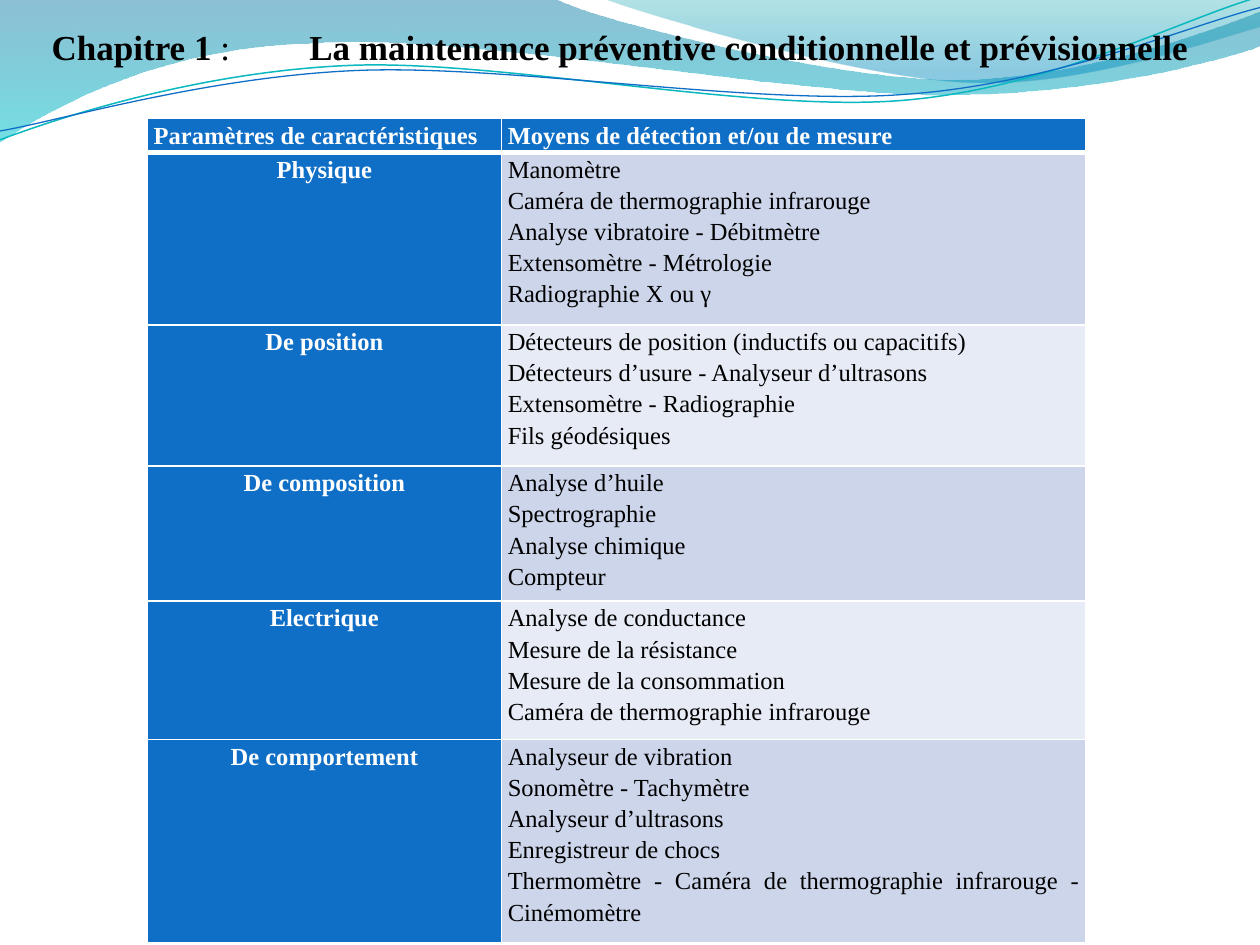
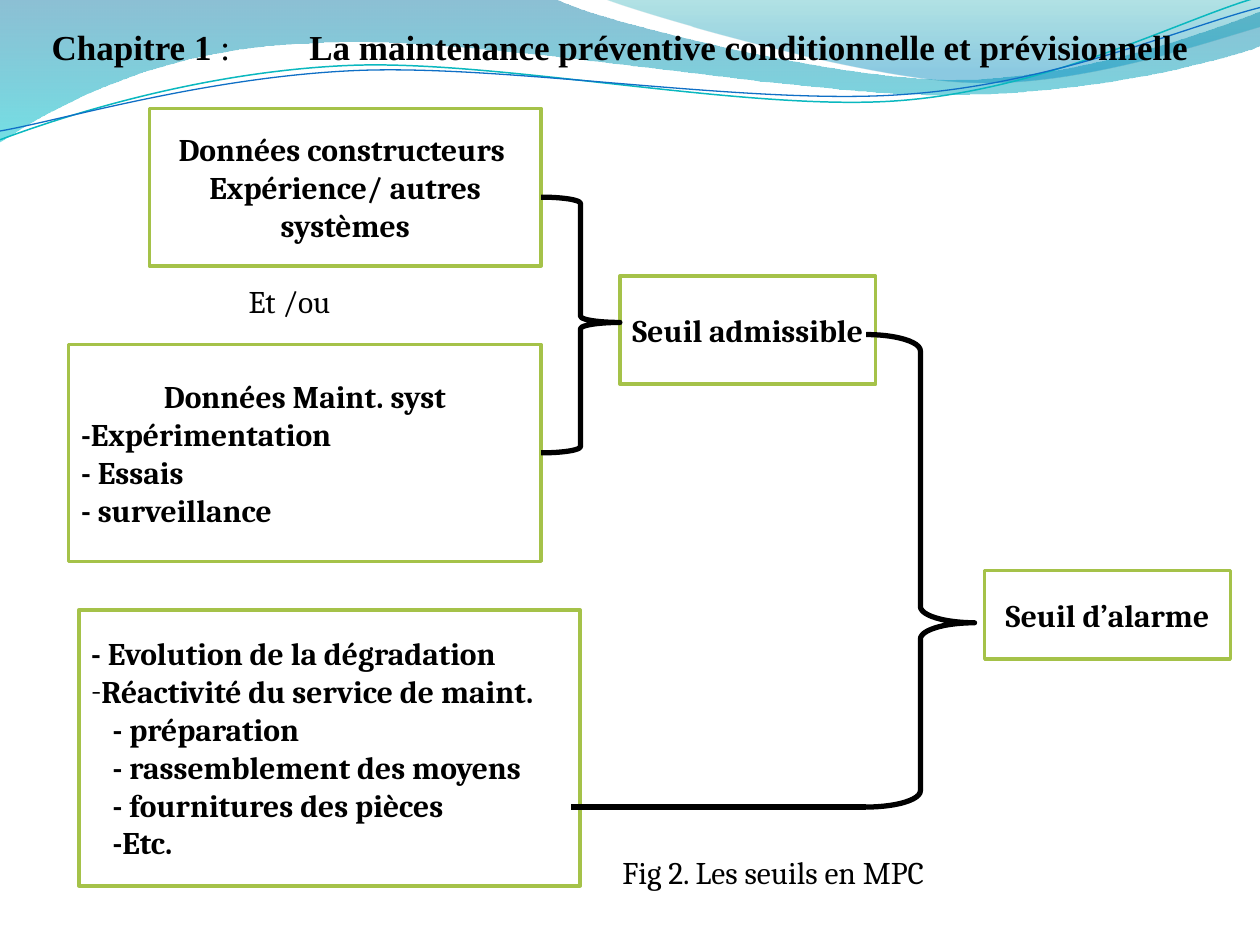
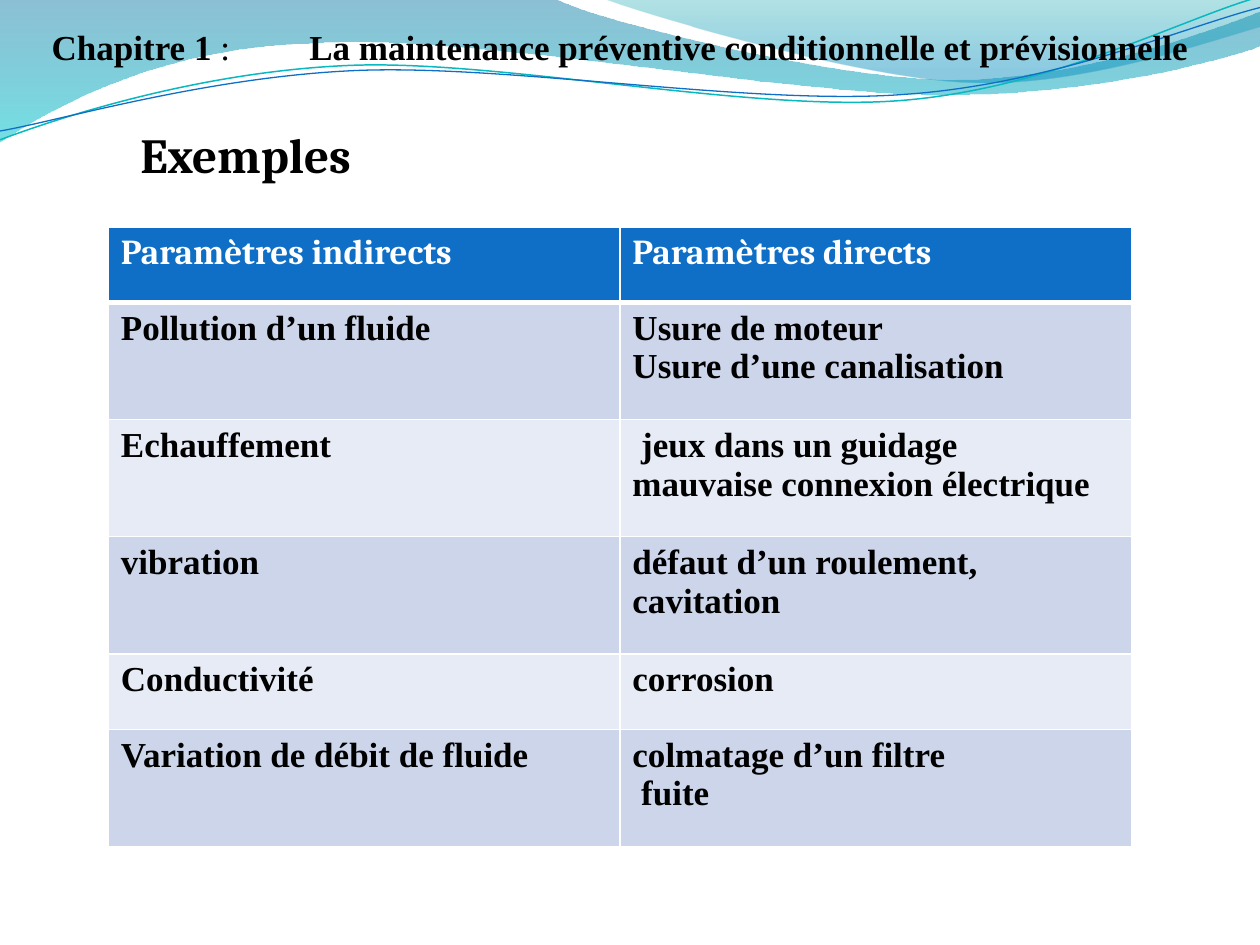
"""Build three slides on conditional and predictive preventive maintenance."""

from dataclasses import dataclass, field
from typing import Any, Optional

import lxml.etree
import pptx
import pptx.dml.color
import pptx.enum.shapes
import pptx.enum.text
import pptx.oxml.ns
import pptx.util

RGBColor = pptx.dml.color.RGBColor
Align = pptx.enum.text.PP_ALIGN
Anchor = pptx.enum.text.MSO_ANCHOR
AutoSize = pptx.enum.text.MSO_AUTO_SIZE
Preset = pptx.enum.shapes.MSO_SHAPE
Point = tuple[float, float]


@dataclass(frozen=True)
class Theme:
    """Hold the colours, fonts and sizes of the whole deck."""

    black: RGBColor = RGBColor.from_string("000000")
    white: RGBColor = RGBColor.from_string("FFFFFF")
    blue: RGBColor = RGBColor.from_string("0F6FC6")
    teal: RGBColor = RGBColor.from_string("0AB8BF")
    green: RGBColor = RGBColor.from_string("A5C249")
    bands: tuple[RGBColor, ...] = (RGBColor.from_string("CCD5EA"), RGBColor.from_string("E7EBF5"))
    serif: str = "Times New Roman"
    diagram: str = "Cambria"
    small: int = 14
    normal: int = 18
    large: int = 20
    heading: int = 28
    box_line: float = 2
    link_line: float = 3
    header_rule: float = 3


THEME = Theme()
GRID_COLUMNS = 100
GRID_ROWS = 75
SLIDE_WIDTH = pptx.util.Inches(10)
SLIDE_HEIGHT = pptx.util.Inches(7.5)


def across(columns: float) -> int:
    """Turn grid columns into a length."""
    return round(SLIDE_WIDTH * columns / GRID_COLUMNS)


def down(rows: float) -> int:
    """Turn grid rows into a length."""
    return round(SLIDE_HEIGHT * rows / GRID_ROWS)


@dataclass(frozen=True)
class Box:
    """Place an element on the grid."""

    left: float
    top: float
    width: float
    height: float

    def lengths(self) -> tuple[int, int, int, int]:
        """Give left, top, width and height as lengths."""
        return across(self.left), down(self.top), across(self.width), down(self.height)


@dataclass(frozen=True)
class Line:
    """Describe one paragraph."""

    text: str
    alignment: Any = Align.LEFT
    indent: float = 0
    bullet: str = ""


@dataclass(frozen=True)
class Panel:
    """Describe a framed box or a plain caption with its paragraphs."""

    box: Box
    lines: tuple[Line, ...]


@dataclass(frozen=True)
class Brace:
    """Describe a right brace with its curl and tip position."""

    box: Box
    curl: float
    tip: float


@dataclass(frozen=True)
class Stop:
    """Describe one gradient stop, with its opacity in percent."""

    position: float
    color: str
    opacity: int


@dataclass(frozen=True)
class Wave:
    """Describe a curve by its start and its straight or cubic segments."""

    start: Point
    segments: tuple[tuple[Point, ...], ...]
    stops: tuple[Stop, ...] = ()
    color: RGBColor = THEME.blue
    weight: float = 0.75


@dataclass(frozen=True)
class TableSpec:
    """Describe a two-column table."""

    box: Box
    columns: tuple[float, ...]
    rows: tuple[float, ...]
    cells: tuple[tuple[str, str], ...]
    size: int
    header_font: str
    body_bold: bool
    row_headers: bool = False
    alignment: Any = Align.LEFT
    spacing: Optional[float] = None
    margins: dict[str, int] = field(default_factory=dict)


WAVES = (
    Wave((0, 0), (
        ((44, -0.1),),
        ((47.6, 1.7), (66.4, 6.3), (75.8, 6.3)),
        ((85.3, 6.3), (95.8, 2.6), (100, 0.9)),
        ((100.1, 3.6),),
        ((98.3, 4.4), (87, 7.6), (74.6, 7.5)),
        ((62.2, 7.5), (38.2, 2.8), (25.7, 3.4)),
        ((12.9, 3.6), (4.6, 8.3), (-0.1, 11.3)),
        ((0, 0),),
    ), stops=(Stop(0, "0074A1", 45), Stop(1, "00C6CF", 55))),
    Wave((47.9, -0.1), (
        ((50.9, 1.1), (68.2, 6.2), (76.9, 6.5)),
        ((85.6, 6.9), (96.1, 3.2), (100, 2.1)),
        ((100, 0),),
        ((47.9, -0.1),),
    ), stops=(Stop(0, "00A1A9", 30), Stop(0.8, "008BBF", 45))),
    Wave((0, 11.1), (
        ((4.8, 9.3), (15.8, 5.7), (27.7, 5.2)),
        ((39.5, 4.7), (59.3, 8.9), (71.3, 8)),
        ((83.3, 7.1), (93.8, 1.5), (99.8, -0.2)),
    ), color=THEME.teal, weight=0.85),
    Wave((0, 10.4), (
        ((4.7, 9.6), (16.4, 6.1), (28.3, 5.6)),
        ((40.3, 5.1), (59.7, 8.4), (71.7, 7.5)),
        ((83.6, 6.7), (94.1, 2.1), (100, 0.6)),
    )),
)

MEASURES = TableSpec(
    Box(11.7, 9.4, 74.5, 63.7), (28.1, 46.4), (2, 13.7, 11.2, 10.2, 11, 15.6),
    (
        ("Paramètres de caractéristiques", "Moyens de détection et/ou de mesure"),
        ("Physique", "Manomètre\nCaméra de thermographie infrarouge\nAnalyse vibratoire - Débitmètre\n"
                     "Extensomètre - Métrologie\nRadiographie X ou γ"),
        ("De position", "Détecteurs de position (inductifs ou capacitifs)\n"
                        "Détecteurs d’usure - Analyseur d’ultrasons\n"
                        "Extensomètre - Radiographie\nFils géodésiques"),
        ("De composition", "Analyse d’huile\nSpectrographie\nAnalyse chimique\nCompteur"),
        ("Electrique", "Analyse de conductance\nMesure de la résistance\n"
                       "Mesure de la consommation\nCaméra de thermographie infrarouge"),
        ("De comportement", "Analyseur de vibration\nSonomètre - Tachymètre\nAnalyseur d’ultrasons\n"
                            "Enregistreur de chocs\n"
                            "Thermomètre - Caméra de thermographie infrarouge - Cinémomètre"),
    ),
    THEME.small, THEME.serif, body_bold=False, row_headers=True, alignment=Align.JUSTIFY, spacing=1.15,
    margins={"margin_left": across(0.5), "margin_right": across(0.5), "margin_top": 0, "margin_bottom": 0},
)

EXAMPLES = TableSpec(
    Box(8.6, 18, 81.2, 49.2), (40.6, 40.6), (6, 9.3, 9.3, 9.3, 6, 9.3),
    (
        ("Paramètres indirects", "Paramètres directs"),
        ("Pollution d’un fluide", "Usure de moteur\nUsure d’une canalisation"),
        ("Echauffement", " jeux dans un guidage\nmauvaise connexion électrique"),
        ("vibration", "défaut d’un roulement,\ncavitation"),
        ("Conductivité", "corrosion"),
        ("Variation de débit de fluide", "colmatage d’un filtre\n fuite"),
    ),
    THEME.large, THEME.diagram, body_bold=True,
)

SUB_INDENT = 1.7
PANELS = (
    Panel(Box(49.2, 21.9, 20.3, 8.6), (Line("Seuil admissible", Align.CENTER),)),
    Panel(Box(5.45, 27.35, 37.5, 17.2), (
        Line("Données Maint. syst", Align.CENTER),
        Line("-Expérimentation"), Line("- Essais"), Line("- surveillance"),
    )),
    Panel(Box(11.85, 8.6, 31.1, 12.5), (
        Line("Données constructeurs ", Align.CENTER),
        Line("Expérience/ autres systèmes", Align.CENTER),
    )),
    Panel(Box(6.25, 48.4, 39.8, 21.9), (
        Line("- Evolution de la dégradation"),
        Line("Réactivité du service de maint.", bullet="-"),
        Line("- préparation", indent=SUB_INDENT),
        Line("- rassemblement des moyens", indent=SUB_INDENT),
        Line("- fournitures des pièces", indent=SUB_INDENT),
        Line("-Etc.", indent=SUB_INDENT),
    )),
    Panel(Box(78.15, 45.3, 19.5, 7), (Line("Seuil d’alarme", Align.CENTER),)),
)
CAPTIONS = (
    Panel(Box(18.75, 21.9, 15.6, 4), (Line("Et /ou"),)),
    Panel(Box(48.4, 67.2, 39.1, 4), (Line("Fig 2. Les seuils en MPC"),)),
)
BRACES = (
    Brace(Box(42.95, 15.65, 6.25, 20.3), 0.08, 0.49),
    Brace(Box(68.75, 26.55, 8.6, 37.5), 0.15, 0.61),
)
LINK = ((68.75, 64.05), (45.3, 64.05))

EXAMPLES_HEADING = Panel(Box(10.15, 9.4, 21.9, 5.7), (Line("Exemples"),))
TITLE_BOX = Box(3.1, 1.55, 93.8, 4.4)
TITLE_TAB = 20.45
TITLE_RUNS = (
    ("Chapitre 1", True),
    (" :\t", False),
    ("La maintenance préventive conditionnelle et prévisionnelle", True),
)


def apply(target: Any, formats: dict[str, Any]) -> None:
    """Set each named attribute of the target."""
    for name, value in formats.items():
        setattr(target, name, value)


def add_xml(parent: Any, tag: str, **attributes: str) -> Any:
    """Append a child element with the given attributes."""
    return lxml.etree.SubElement(parent, pptx.oxml.ns.qn(tag), **attributes)


def format_font(font: Any, name: str, size: float, bold: bool, color: RGBColor = THEME.black) -> None:
    """Format a font."""
    apply(font, {"name": name, "size": pptx.util.Pt(size), "bold": bold})
    font.color.rgb = color


def format_line(line: Any, color: RGBColor, weight: float) -> None:
    """Give a line its colour and weight."""
    line.color.rgb = color
    line.width = pptx.util.Pt(weight)


def write_lines(frame: Any, lines: tuple[Line, ...], font: dict[str, Any], spacing: Optional[float] = None) -> None:
    """Write formatted paragraphs into a text frame."""
    for index, line in enumerate(lines):
        paragraph = frame.add_paragraph() if index else frame.paragraphs[0]
        apply(paragraph, {"alignment": line.alignment, "line_spacing": spacing})
        run = paragraph.add_run()
        run.text = line.text
        format_font(run.font, **font)
        add_xml(paragraph._p, "a:endParaRPr", sz=str(font["size"] * 100))
        properties = paragraph._p.get_or_add_pPr()
        if line.indent:
            properties.set("marL", str(across(line.indent)))
        if line.bullet:
            add_xml(properties, "a:buFont", typeface=font["name"])
            add_xml(properties, "a:buChar", char=line.bullet)


def bend_segments(shape: Any, wave: Wave) -> None:
    """Turn each run of three control points into one cubic curve."""
    outline = next(shape.element.iter(pptx.oxml.ns.qn("a:path")))
    corners = iter(outline.findall(pptx.oxml.ns.qn("a:lnTo")))
    for segment in wave.segments:
        group = [next(corners) for _ in segment]
        if len(group) == 3:
            curve = add_xml(outline, "a:cubicBezTo")
            group[0].addprevious(curve)
            for corner in group:
                curve.append(corner[0])
                outline.remove(corner)


def add_wave(slide: Any, wave: Wave) -> Any:
    """Draw a wave as a translucent gradient or as a thin line."""
    builder = slide.shapes.build_freeform(across(wave.start[0]), down(wave.start[1]))
    controls = [(across(x), down(y)) for segment in wave.segments for x, y in segment]
    builder.add_line_segments(controls, close=bool(wave.stops))
    shape = builder.convert_to_shape()
    bend_segments(shape, wave)
    shape.shadow.inherit = False
    if not wave.stops:
        shape.fill.background()
        format_line(shape.line, wave.color, wave.weight)
        return shape
    shape.line.fill.background()
    shape.fill.gradient()
    shape.fill.gradient_angle = 270
    for gradient_stop, stop in zip(shape.fill.gradient_stops, wave.stops):
        gradient_stop.position = stop.position
        gradient_stop.color.rgb = RGBColor.from_string(stop.color)
    for color, stop in zip(shape.element.iter(pptx.oxml.ns.qn("a:srgbClr")), wave.stops):
        add_xml(color, "a:alpha", val=str(stop.opacity * 1000))
    return shape


def move_waves_to_layout(slide: Any) -> None:
    """Draw the shared waves and put them at the back of the layout."""
    tree = slide.slide_layout.shapes.element
    for index, wave in enumerate(WAVES):
        element = add_wave(slide, wave).element
        element.nvSpPr.cNvPr.set("id", str(100 + index))
        tree.insert(2 + index, element)


def add_titled_slide(presentation: Any) -> Any:
    """Add a slide with the chapter title."""
    slide = presentation.slides.add_slide(presentation.slide_layouts[5])
    title = slide.shapes.title
    apply(title, dict(zip(("left", "top", "width", "height"), TITLE_BOX.lengths())))
    apply(title.text_frame, {"word_wrap": True, "vertical_anchor": Anchor.TOP,
                             "auto_size": AutoSize.SHAPE_TO_FIT_TEXT})
    paragraph = title.text_frame.paragraphs[0]
    paragraph.alignment = Align.LEFT
    tabs = add_xml(paragraph._p.get_or_add_pPr(), "a:tabLst")
    add_xml(tabs, "a:tab", pos=str(across(TITLE_TAB)), algn="l")
    for text, bold in TITLE_RUNS:
        run = paragraph.add_run()
        run.text = text
        format_font(run.font, THEME.serif, THEME.large, bold)
    return slide


def add_header_rule(cell: Any) -> None:
    """Draw the thick white rule below a header cell."""
    properties = cell._tc.get_or_add_tcPr()
    rule = add_xml(properties, "a:lnB", w=str(pptx.util.Pt(THEME.header_rule)))
    add_xml(add_xml(rule, "a:solidFill"), "a:srgbClr", val=str(THEME.white))
    properties.insert(0, rule)


def add_table(slide: Any, spec: TableSpec) -> None:
    """Draw a table with a header row and banded rows."""
    table = slide.shapes.add_table(len(spec.rows), len(spec.columns), *spec.box.lengths()).table
    table.first_col = spec.row_headers
    for column, width in zip(table.columns, spec.columns):
        column.width = across(width)
    for row, height in zip(table.rows, spec.rows):
        row.height = down(height)
    for row_index, texts in enumerate(spec.cells):
        for column_index, text in enumerate(texts):
            cell = table.cell(row_index, column_index)
            row_header = spec.row_headers and column_index == 0 and row_index > 0
            header = row_index == 0 or row_header
            apply(cell, spec.margins)
            cell.fill.solid()
            cell.fill.fore_color.rgb = THEME.blue if header else THEME.bands[(row_index - 1) % 2]
            if row_index == 0:
                add_header_rule(cell)
            font = {
                "name": spec.header_font if row_index == 0 else THEME.serif,
                "size": spec.size,
                "bold": header or spec.body_bold,
                "color": THEME.white if header else THEME.black,
            }
            alignment = Align.CENTER if row_header else spec.alignment
            lines = tuple(Line(part, alignment) for part in text.split("\n"))
            write_lines(cell.text_frame, lines, font, spec.spacing)


def add_panel(slide: Any, panel: Panel) -> None:
    """Draw a green framed box with bold text."""
    shape = slide.shapes.add_shape(Preset.RECTANGLE, *panel.box.lengths())
    shape.shadow.inherit = False
    shape.fill.solid()
    shape.fill.fore_color.rgb = THEME.white
    format_line(shape.line, THEME.green, THEME.box_line)
    apply(shape.text_frame, {"word_wrap": True, "vertical_anchor": Anchor.MIDDLE})
    write_lines(shape.text_frame, panel.lines, {"name": THEME.diagram, "size": THEME.normal, "bold": True})


def add_caption(slide: Any, caption: Panel, size: int = THEME.normal, bold: bool = False) -> None:
    """Write text without a frame."""
    frame = slide.shapes.add_textbox(*caption.box.lengths()).text_frame
    apply(frame, {"word_wrap": True, "auto_size": AutoSize.SHAPE_TO_FIT_TEXT})
    write_lines(frame, caption.lines, {"name": THEME.diagram, "size": size, "bold": bold})


def add_brace(slide: Any, brace: Brace) -> None:
    """Draw a right brace."""
    shape = slide.shapes.add_shape(Preset.RIGHT_BRACE, *brace.box.lengths())
    shape.shadow.inherit = False
    shape.fill.background()
    format_line(shape.line, THEME.black, THEME.link_line)
    shape.adjustments[0] = brace.curl
    shape.adjustments[1] = brace.tip


def add_link(slide: Any, start: Point, end: Point) -> None:
    """Draw a straight line between two grid points."""
    connector = slide.shapes.add_connector(
        pptx.enum.shapes.MSO_CONNECTOR.STRAIGHT, across(start[0]), down(start[1]), across(end[0]), down(end[1]))
    format_line(connector.line, THEME.black, THEME.link_line)
    add_xml(connector.element.spPr, "a:effectLst")


def main() -> None:
    """Build and save the presentation."""
    presentation = pptx.Presentation()
    apply(presentation, {"slide_width": SLIDE_WIDTH, "slide_height": SLIDE_HEIGHT})
    measures, thresholds, examples = (add_titled_slide(presentation) for _ in range(3))
    move_waves_to_layout(measures)
    add_table(measures, MEASURES)
    for draw, items in ((add_panel, PANELS), (add_caption, CAPTIONS), (add_brace, BRACES)):
        for item in items:
            draw(thresholds, item)
    add_link(thresholds, *LINK)
    add_table(examples, EXAMPLES)
    add_caption(examples, EXAMPLES_HEADING, THEME.heading, bold=True)
    presentation.save("out.pptx")


if __name__ == "__main__":
    main()
